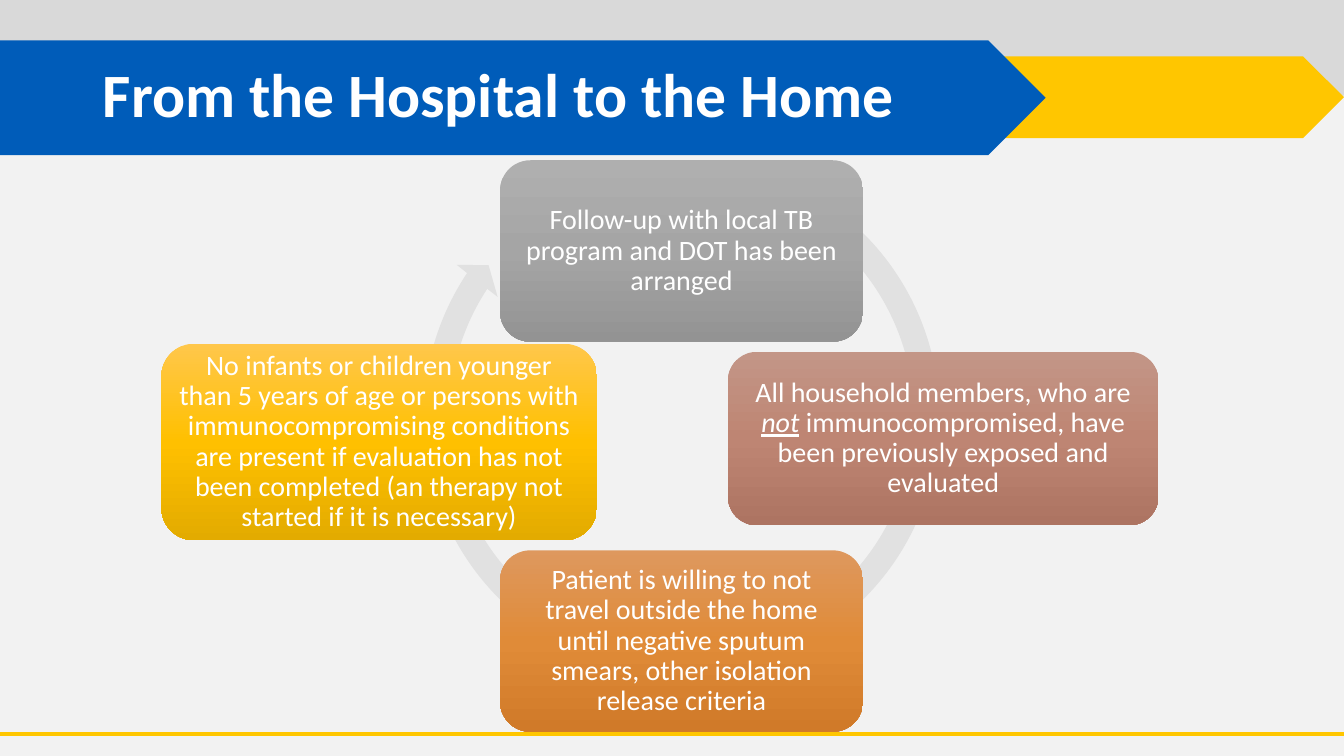
from copy import deepcopy
from dataclasses import dataclass

from pptx import Presentation
from pptx.dml.color import RGBColor
from pptx.enum.shapes import MSO_CONNECTOR, MSO_SHAPE
from pptx.enum.text import MSO_ANCHOR, MSO_AUTO_SIZE, PP_ALIGN
from pptx.oxml.ns import qn
from pptx.oxml.xmlchemy import OxmlElement
from pptx.util import Inches, Pt


@dataclass(frozen=True)
class Theme:
    font: str = "Calibri"
    title_size: int = 44
    card_size: int = 20
    line_spacing: float = 0.9
    background: str = "F2F2F2"
    band: str = "D9D9D9"
    blue: str = "005CB9"
    yellow: str = "FFC600"
    ring: str = "E1E1E1"
    text: str = "FFFFFF"
    gray_card: tuple = ("AFAFAF", "A5A5A5", "939393")
    brown_card: tuple = ("C39687", "BE8573", "AD7462")
    orange_card: tuple = ("DE985E", "E08B38", "D07A29")
    gold_card: tuple = ("FFC74B", "FFC000", "E3AB00")


THEME = Theme()

CARDS = [
    ((3.36, 0, 3.6, 1.8), THEME.gray_card,
     [("Follow-up with local TB program and DOT has been arranged", {})]),
    ((5.62, 1.9, 4.27, 1.72), THEME.brown_card,
     [("All household members, who are ", {}),
      ("not", {"italic": True, "underline": True}),
      (" immunocompromised, have been previously exposed and evaluated", {})]),
    ((3.36, 3.87, 3.6, 1.8), THEME.orange_card,
     [("Patient is willing to not travel outside the home until negative "
       "sputum smears, other isolation release criteria", {})]),
    ((0, 1.82, 4.32, 1.95), THEME.gold_card,
     [("No infants or children younger than 5 years of age or persons with "
       "immunocompromising conditions are present if evaluation has not been "
       "completed (an therapy not started if it is necessary)", {})]),
]


def apply_format(target, values):
    for attribute, value in values.items():
        setattr(target, attribute, value)


def style_run(run, size, **extra):
    apply_format(run.font, {"name": THEME.font, "size": Pt(size), **extra})
    run.font.color.rgb = RGBColor.from_string(THEME.text)


def add_block(slide, preset, box, color=None):
    block = slide.shapes.add_shape(preset, *map(Inches, box))
    block.shadow.inherit = False
    block.line.fill.background()
    if color:
        block.fill.solid()
        block.fill.fore_color.rgb = RGBColor.from_string(color)
    return block


def fill_gradient(block, colors):
    block.fill.gradient()
    block.fill.gradient_angle = 270
    stop_list = block._element.spPr.find(qn("a:gradFill")).find(qn("a:gsLst"))
    stop_list.insert(1, deepcopy(stop_list[0]))
    for index, (stop, color) in enumerate(zip(block.fill.gradient_stops, colors)):
        stop.position = index / 2
        stop.color.rgb = RGBColor.from_string(color)


def add_header(slide, box, heading):
    left, top, width, height = box
    add_block(slide, MSO_SHAPE.RECTANGLE, (left, top, width, 0.95), THEME.band)
    add_block(slide, MSO_SHAPE.PENTAGON,
              (left + 7.09, top + 0.56, width - 7.09, 0.81), THEME.yellow)
    add_block(slide, MSO_SHAPE.PENTAGON,
              (left, top + 0.4, 10.37, height - 0.4), THEME.blue)

    title = slide.shapes.title
    slide.shapes._spTree.append(title._element)
    apply_format(title, {"left": Inches(left + 0.92), "top": Inches(top + 0.24),
                         "width": Inches(11.5), "height": Inches(1.45)})
    apply_format(title.text_frame, {"vertical_anchor": MSO_ANCHOR.MIDDLE,
                                    "word_wrap": True,
                                    "auto_size": MSO_AUTO_SIZE.NONE})
    paragraph = title.text_frame.paragraphs[0]
    apply_format(paragraph, {"alignment": PP_ALIGN.LEFT,
                             "line_spacing": THEME.line_spacing})
    run = paragraph.add_run()
    run.text = heading
    style_run(run, THEME.title_size, bold=True)


def add_footer_rule(slide, box):
    left, top, width, _ = box
    rule = slide.shapes.add_connector(
        MSO_CONNECTOR.STRAIGHT, *map(Inches, (left, top, left + width, top)))
    rule.line.color.rgb = RGBColor.from_string(THEME.yellow)
    rule.line.width = Pt(3)
    rule._element.spPr.append(OxmlElement("a:effectLst"))


def add_card(slide, box, colors, pieces):
    card = add_block(slide, MSO_SHAPE.ROUNDED_RECTANGLE, box)
    fill_gradient(card, colors)
    frame = card.text_frame
    apply_format(frame, {"word_wrap": True, "vertical_anchor": MSO_ANCHOR.MIDDLE})
    apply_format(frame, {f"margin_{side}": Inches(0.08)
                         for side in ("left", "top", "right", "bottom")})
    paragraph = frame.paragraphs[0]
    apply_format(paragraph, {"alignment": PP_ALIGN.CENTER,
                             "line_spacing": THEME.line_spacing})
    for wording, emphasis in pieces:
        run = paragraph.add_run()
        run.text = wording
        style_run(run, THEME.card_size, **emphasis)


def add_cycle(slide, box, cards):
    left, top, _, _ = box
    ring = add_block(slide, MSO_SHAPE.CIRCULAR_ARROW,
                     (left + 2.47, top - 0.15, 5.38, 5.38), THEME.ring)
    for index, value in enumerate((0.047, 2.729, 128.116, 180.444, 0.048)):
        ring.adjustments[index] = value
    for (x, y, width, height), colors, pieces in cards:
        add_card(slide, (left + x, top + y, width, height), colors, pieces)


def main():
    deck = Presentation()
    apply_format(deck, {"slide_width": Inches(13.33), "slide_height": Inches(7.5)})
    slide = deck.slides.add_slide(deck.slide_layouts[5])
    slide.background.fill.solid()
    slide.background.fill.fore_color.rgb = RGBColor.from_string(THEME.background)
    add_footer_rule(slide, (0, 7.28, 13.33, 0))
    add_header(slide, (0, 0, 13.33, 1.54), "From the Hospital to the Home")
    add_cycle(slide, (1.6, 1.59, 9.89, 5.67), CARDS)
    deck.save("out.pptx")


if __name__ == "__main__":
    main()
